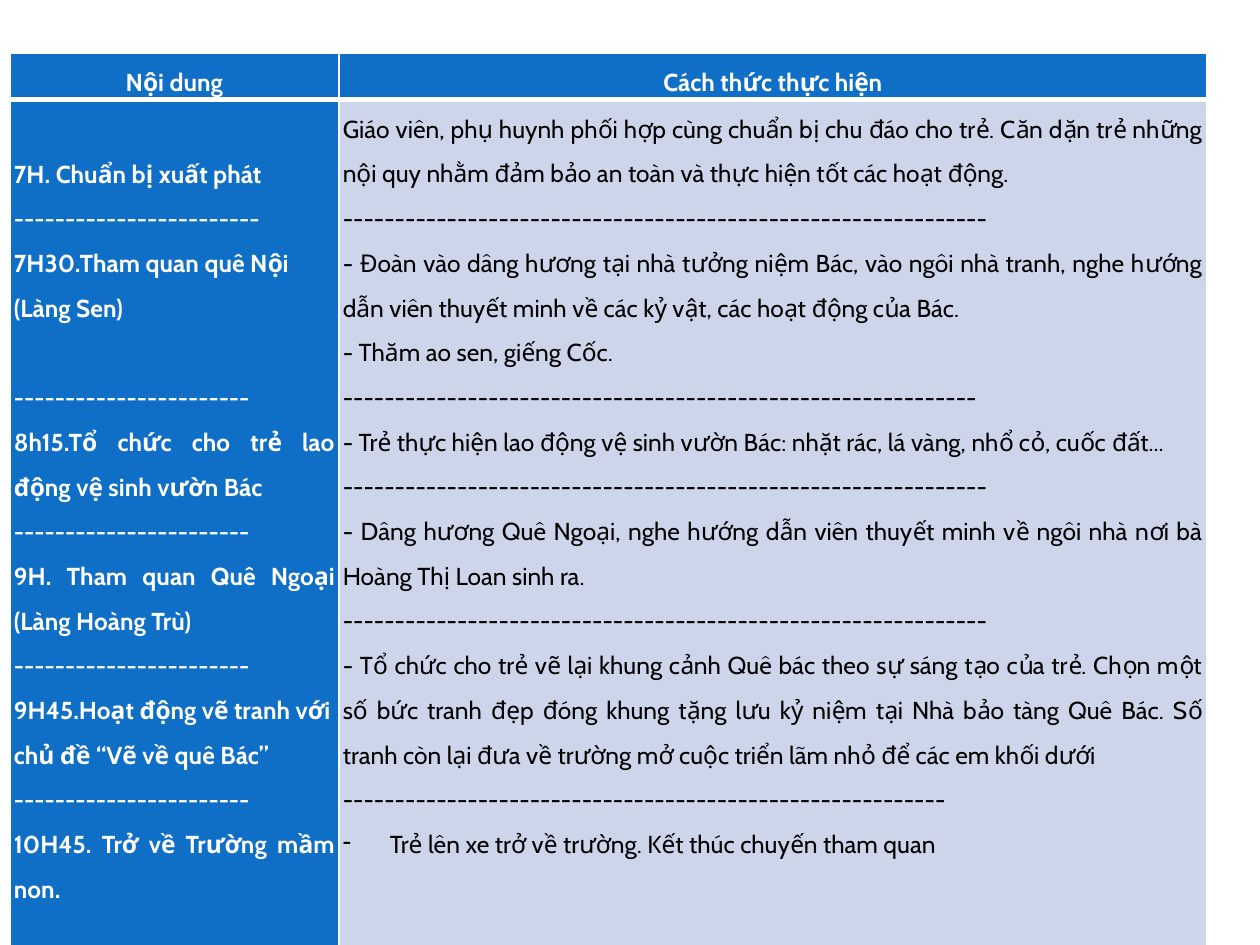
from dataclasses import dataclass

from lxml.etree import SubElement
from pptx import Presentation
from pptx.dml.color import RGBColor
from pptx.enum.text import MSO_ANCHOR, PP_ALIGN
from pptx.oxml.ns import qn
from pptx.util import Cm, Pt


@dataclass(frozen=True)
class Theme:
    font: str = "Cabin"
    size: float = 14
    line: float = 25.6  # height of one line of text at 1.5 spacing
    blue: str = "0F6FC6"
    pale: str = "CCD5EA"
    white: str = "FFFFFF"
    black: str = "000000"


THEME = Theme()
HEAD = {"fill": THEME.blue, "color": THEME.white, "bold": True}
BODY = {"fill": THEME.pale, "color": THEME.black, "bold": False}
MARGINS = {"margin_left": Cm(0.08), "margin_right": Cm(0.08),
           "margin_top": 0, "margin_bottom": 0,
           "vertical_anchor": MSO_ANCHOR.TOP}
JUSTIFIED = {"alignment": PP_ALIGN.JUSTIFY, "line_spacing": 1.5}
CENTRED = {**JUSTIFIED, "alignment": PP_ALIGN.CENTER}
LEFT = {**JUSTIFIED, "alignment": PP_ALIGN.LEFT}
LINE_GAP = {**JUSTIFIED, "space_before": Pt(THEME.line)}


def dashes(n):
    return "-" * n


# Each entry is a text, or a text with its own paragraph format
SCHEDULE = [
    "7H. Chuẩn bị xuất phát",
    dashes(24),
    "7H30.Tham quan quê Nội",
    "(Làng Sen)",
    (dashes(23), LINE_GAP),
    "8h15.Tổ chức cho trẻ lao động vệ sinh vườn Bác",
    dashes(23),
    "9H. Tham quan Quê Ngoại (Làng Hoàng Trù)",
    dashes(23),
    ("9H45.Hoạt động vẽ tranh với chủ đề “Vẽ về quê Bác”", LEFT),
    dashes(23),
    "10H45. Trở về Trường mầm non.",
]
ACTIVITIES = [
    "Giáo viên, phụ huynh phối hợp cùng chuẩn bị chu đáo cho trẻ. Căn dặn trẻ "
    "những nội quy nhằm đảm bảo an toàn và thực hiện tốt các hoạt động.",
    dashes(62),
    "- Đoàn vào dâng hương tại nhà tưởng niệm Bác, vào ngôi nhà tranh, nghe "
    "hướng dẫn viên thuyết minh về các kỷ vật, các hoạt động của Bác.",
    "- Thăm ao sen, giếng Cốc.",
    dashes(61),
    "- Trẻ thực hiện lao động vệ sinh vườn Bác: nhặt rác, lá vàng, nhổ cỏ, "
    "cuốc đất...",
    dashes(62),
    "- Dâng hương Quê Ngoại, nghe hướng dẫn viên thuyết minh về ngôi nhà nơi "
    "bà Hoàng Thị Loan sinh ra.",
    dashes(62),
    "- Tổ chức cho trẻ vẽ lại khung cảnh Quê bác theo sự sáng tạo của trẻ. "
    "Chọn một số bức tranh đẹp đóng khung tặng lưu kỷ niệm tại Nhà bảo tàng "
    "Quê Bác. Số tranh còn lại đưa về trường mở cuộc triển lãm nhỏ để các em "
    "khối dưới",
    dashes(58),
    "Trẻ lên xe trở về trường. Kết thúc chuyến tham quan",
]


def apply(obj, values):
    for name, value in values.items():
        setattr(obj, name, value)


def set_borders(cell, widths):
    """Draw white borders; they must precede the fill in the cell's XML."""
    tcPr = cell._tc.get_or_add_tcPr()
    for side, width in widths.items():
        ln = SubElement(tcPr, qn(f"a:ln{side}"), w=str(Pt(width)))
        fill = SubElement(ln, qn("a:solidFill"))
        SubElement(fill, qn("a:srgbClr"), val=THEME.white)


def add_dash_bullet(p, indent):
    pPr = p._p.get_or_add_pPr()
    pPr.set("marL", str(indent))
    pPr.set("indent", str(-indent))
    SubElement(pPr, qn("a:buChar"), char="-")


def fill_cell(cell, entries, look, widths, default=JUSTIFIED):
    apply(cell, MARGINS)
    set_borders(cell, widths)
    cell.fill.solid()
    cell.fill.fore_color.rgb = RGBColor.from_string(look["fill"])
    tf = cell.text_frame
    for i, entry in enumerate(entries):
        text, fmt = (entry, default) if isinstance(entry, str) else entry
        p = tf.paragraphs[0] if i == 0 else tf.add_paragraph()
        apply(p, fmt)
        r = p.add_run()
        r.text = text
        apply(r.font, {"name": THEME.font, "size": Pt(THEME.size),
                       "bold": look["bold"]})
        r.font.color.rgb = RGBColor.from_string(look["color"])


def add_plan_table(s):
    widths, heights = (Cm(6.63), Cm(17.5)), (Cm(0.94), Cm(17.81))
    table = s.shapes.add_table(2, 2, Cm(0.2), Cm(1.07),
                               sum(widths), sum(heights)).table
    table.horz_banding = False
    for col, width in zip(table.columns, widths):
        col.width = width
    for row, height in zip(table.rows, heights):
        row.height = height

    # Header row, with a thick rule below it
    for col, title in enumerate(("Nội dung", "Cách thức thực hiện")):
        fill_cell(table.cell(0, col), [title], HEAD,
                  {"L": 1, "R": 1, "T": 1, "B": 3}, CENTRED)

    # Timetable and what happens at each stop
    body_borders = {"L": 1, "R": 1, "T": 3, "B": 1}
    times, actions = table.cell(1, 0), table.cell(1, 1)
    fill_cell(times, SCHEDULE, HEAD, body_borders)
    times.margin_top = Pt(THEME.line)
    fill_cell(actions, ACTIVITIES, BODY, body_borders)
    add_dash_bullet(actions.text_frame.paragraphs[-1], Cm(0.95))


def main():
    prs = Presentation()
    apply(prs, {"slide_width": Cm(25.4), "slide_height": Cm(19.05)})
    s = prs.slides.add_slide(prs.slide_layouts[6])
    add_plan_table(s)
    prs.save("out.pptx")


if __name__ == "__main__":
    main()
